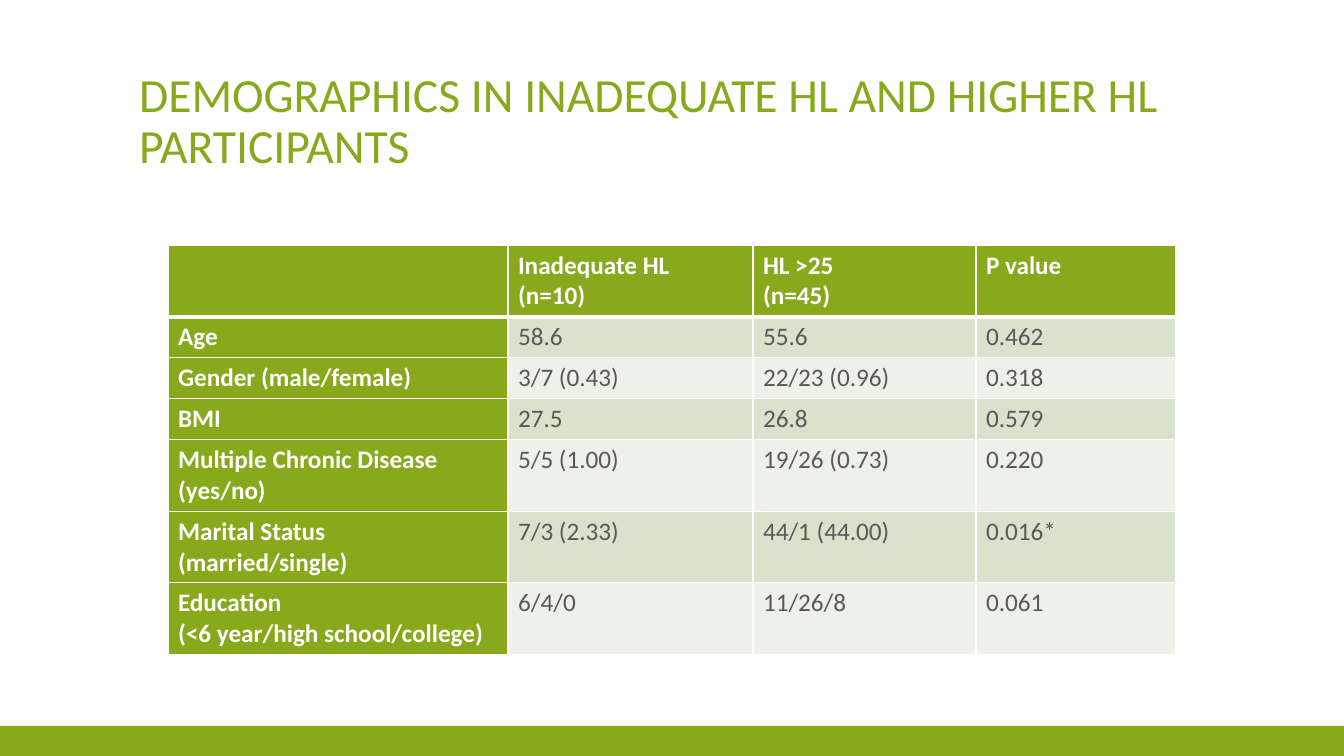
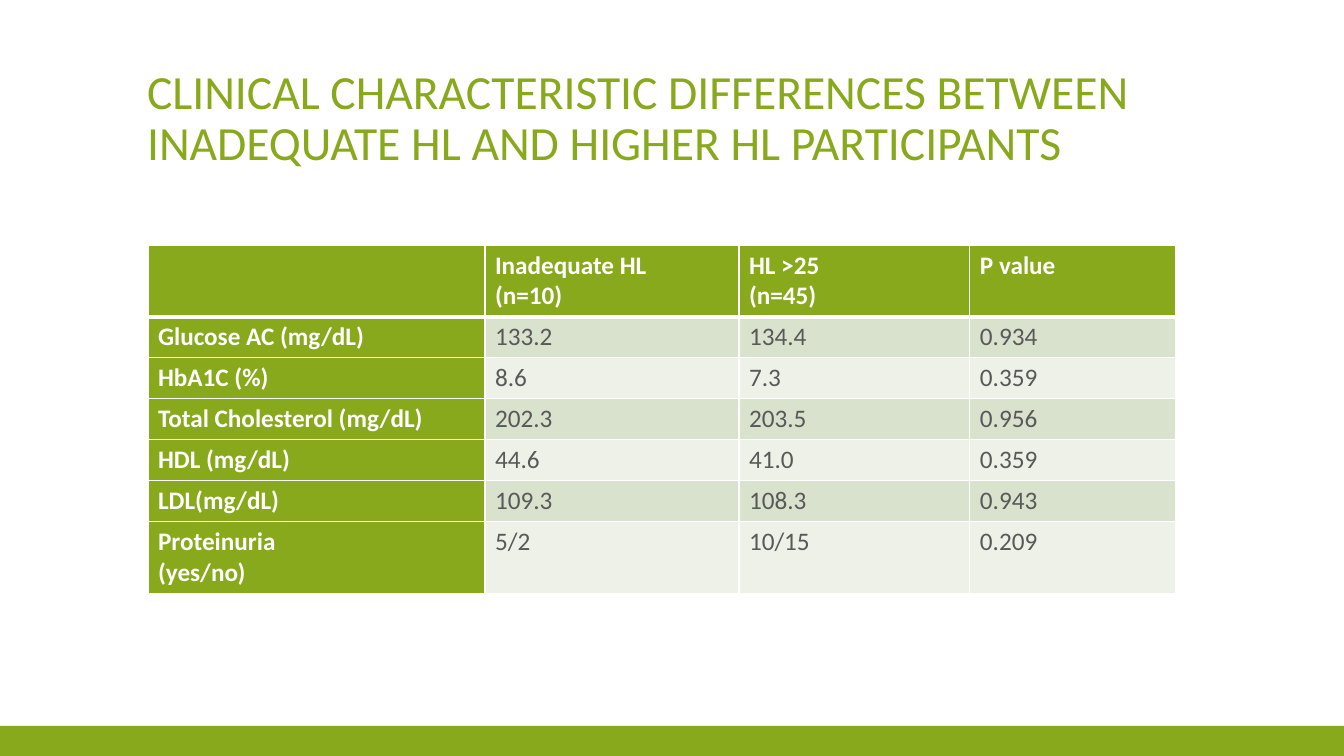
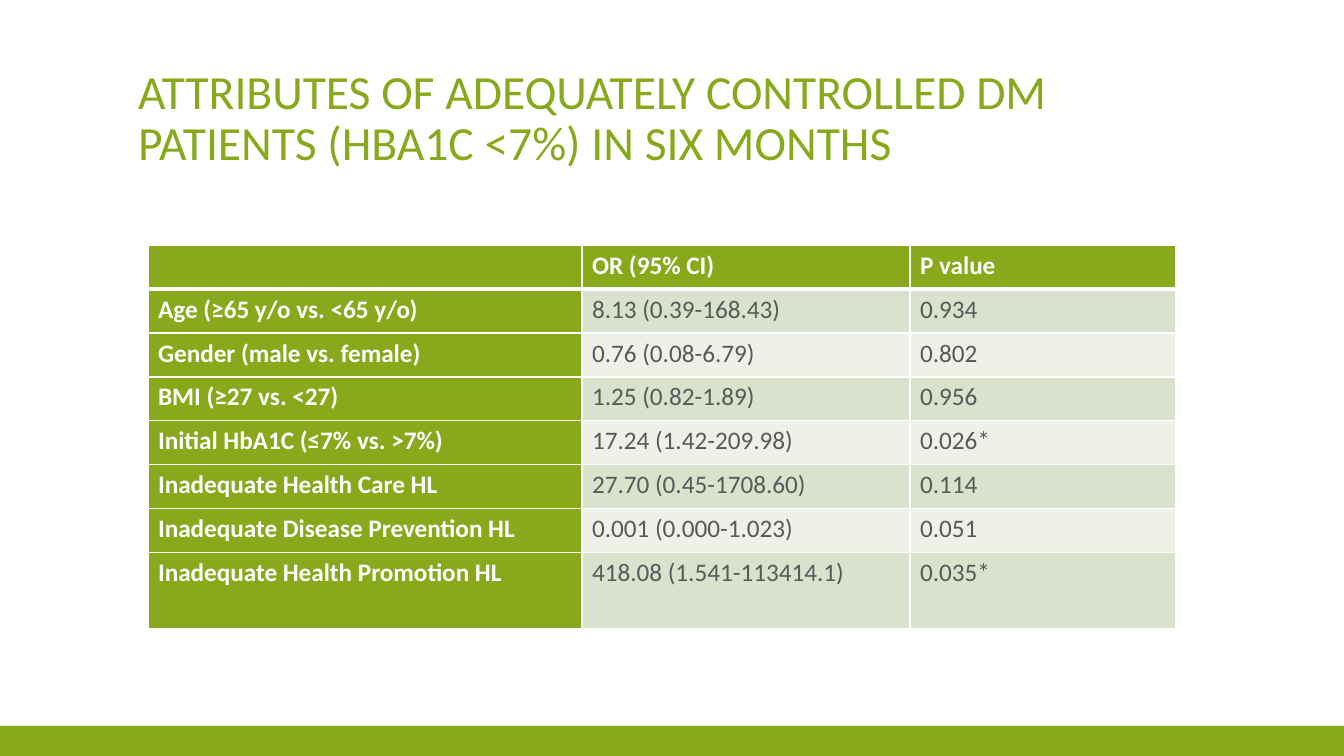
from lxml.etree import SubElement
from pptx import Presentation
from pptx.dml.color import RGBColor
from pptx.enum.shapes import MSO_SHAPE as SHAPE
from pptx.enum.text import MSO_ANCHOR as ANCHOR, MSO_AUTO_SIZE as FIT, PP_ALIGN as ALIGN
from pptx.oxml.ns import qn
from pptx.util import Pt

SCALE = 914400 / 100.8
WIDE, HIGH = 1344, 756
BAND_TOP = 726
TABLE_TOP = 245
LINE, TALL = 41, 71
FONT = "Calibri"

GREEN = RGBColor(0x87, 0xA9, 0x1B)
WHITE = RGBColor(0xFF, 0xFF, 0xFF)
GREY = RGBColor(0x59, 0x59, 0x59)
STRIPES = (RGBColor(0xD9, 0xE2, 0xCD), RGBColor(0xED, 0xF1, 0xE8))

GROUPS = ["", "Inadequate HL\n(n=10)", "HL >25\n(n=45)", "P value"]

SLIDES = [
    dict(
        title="DEMOGRAPHICS IN INADEQUATE HL AND HIGHER HL PARTICIPANTS",
        box=(129, 53, 1046, 126),
        left=168,
        cols=[340, 245, 223, 200],
        heights=[TALL, LINE, LINE, LINE, TALL, TALL, TALL],
        rows=[
            GROUPS,
            ["Age", "58.6", "55.6", "0.462"],
            ["Gender (male/female)", "3/7 (0.43)", "22/23 (0.96)", "0.318"],
            ["BMI", "27.5", "26.8", "0.579"],
            ["Multiple Chronic Disease\n(yes/no)", "5/5 (1.00)", "19/26 (0.73)", "0.220"],
            ["Marital Status (married/single)", "7/3 (2.33)", "44/1 (44.00)", "0.016*"],
            ["Education\n(<6 year/high school/college)", "6/4/0", "11/26/8", "0.061"],
        ],
    ),
    dict(
        title="CLINICAL CHARACTERISTIC DIFFERENCES BETWEEN "
              "INADEQUATE HL AND HIGHER HL PARTICIPANTS",
        box=(137, 50, 1039, 126),
        left=148,
        cols=[337, 254, 231, 206],
        heights=[TALL] + [LINE] * 5 + [TALL],
        rows=[
            GROUPS,
            ["Glucose AC (mg/dL)", "133.2", "134.4", "0.934"],
            ["HbA1C (%)", "8.6", "7.3", "0.359"],
            ["Total Cholesterol (mg/dL)", "202.3", "203.5", "0.956"],
            ["HDL (mg/dL)", "44.6", "41.0", "0.359"],
            ["LDL(mg/dL)", "109.3", "108.3", "0.943"],
            ["Proteinuria\n(yes/no)", "5/2", "10/15", "0.209"],
        ],
    ),
    dict(
        title="ATTRIBUTES OF ADEQUATELY CONTROLLED DM PATIENTS (HBA1C <7%) IN SIX MONTHS",
        box=(128, 50, 1048, 126),
        left=148,
        cols=[434, 328, 266],
        heights=[44] * 7 + [76],
        rows=[
            ["", "OR (95% CI)", "P value"],
            ["Age (≥65 y/o vs. <65 y/o)", "8.13 (0.39-168.43)", "0.934"],
            ["Gender (male vs. female)", "0.76 (0.08-6.79)", "0.802"],
            ["BMI (≥27 vs. <27)", "1.25 (0.82-1.89)", "0.956"],
            ["Initial HbA1C (≤7% vs. >7%)", "17.24 (1.42-209.98)", "0.026*"],
            ["Inadequate Health Care HL", "27.70 (0.45-1708.60)", "0.114"],
            ["Inadequate Disease Prevention HL", "0.001 (0.000-1.023)", "0.051"],
            ["Inadequate Health Promotion HL", "418.08 (1.541-113414.1)", "0.035*"],
        ],
    ),
]


def px(num):
    return round(num * SCALE)


def write(frame, text, size=18, color=GREY, bold=False, space=1.0):
    """Fill a text frame, one paragraph for each line of text."""
    for i, line in enumerate(text.split("\n")):
        para = frame.add_paragraph() if i else frame.paragraphs[0]
        para.alignment = ALIGN.LEFT
        para.line_spacing = space
        if line:
            run = para.add_run()
            run.text = line
            font = run.font
            font.name, font.size, font.bold = FONT, Pt(size), bold
            font.color.rgb = color


def add_band(deck, slide):
    """Draw the bottom band and move it to the master, behind all else."""
    band = slide.shapes.add_shape(
        SHAPE.RECTANGLE, 0, px(BAND_TOP), px(WIDE), px(HIGH - BAND_TOP))
    band.shadow.inherit = False
    band.fill.solid()
    band.fill.fore_color.rgb = GREEN
    band.line.fill.background()
    deck.slide_master.shapes.element.insert(2, band.element)


def add_title(slide, text, box):
    title = slide.shapes.title
    title.left, title.top, title.width, title.height = map(px, box)
    frame = title.text_frame
    frame.word_wrap = True
    frame.auto_size = FIT.NONE
    frame.vertical_anchor = ANCHOR.BOTTOM
    write(frame, text, size=34, color=GREEN, space=0.9)


def add_edges(cell, **widths):
    """Put white borders on a cell; widths are points by side: L, R, T, B."""
    props = cell._tc.get_or_add_tcPr()
    for i, side in enumerate("LRTB"):
        edge = SubElement(props, qn("a:ln" + side), w=str(Pt(widths.get(side, 1))))
        fill = SubElement(edge, qn("a:solidFill"))
        SubElement(fill, qn("a:srgbClr"), val=str(WHITE))
        props.insert(i, edge)


def add_grid(slide, left, cols, heights, rows):
    table = slide.shapes.add_table(
        len(rows), len(cols), px(left), px(TABLE_TOP),
        px(sum(cols)), px(sum(heights))).table
    table.first_col = True
    table.horz_banding = False
    for col, width in zip(table.columns, cols):
        col.width = px(width)
    for r, (row, height) in enumerate(zip(rows, heights)):
        table.rows[r].height = px(height)
        for c, text in enumerate(row):
            cell = table.cell(r, c)
            head = r == 0 or c == 0
            cell.fill.solid()
            cell.fill.fore_color.rgb = GREEN if head else STRIPES[(r - 1) % 2]
            add_edges(cell, T=3 if r == 1 else 1, B=3 if r == 0 else 1)
            write(cell.text_frame, text, color=WHITE if head else GREY, bold=head)


def main():
    deck = Presentation()
    deck.slide_width, deck.slide_height = px(WIDE), px(HIGH)
    layout = deck.slide_layouts.get_by_name("Title Only")
    for item in SLIDES:
        slide = deck.slides.add_slide(layout)
        add_title(slide, item["title"], item["box"])
        add_grid(slide, item["left"], item["cols"], item["heights"], item["rows"])
    add_band(deck, slide)
    deck.save("out.pptx")


if __name__ == "__main__":
    main()
